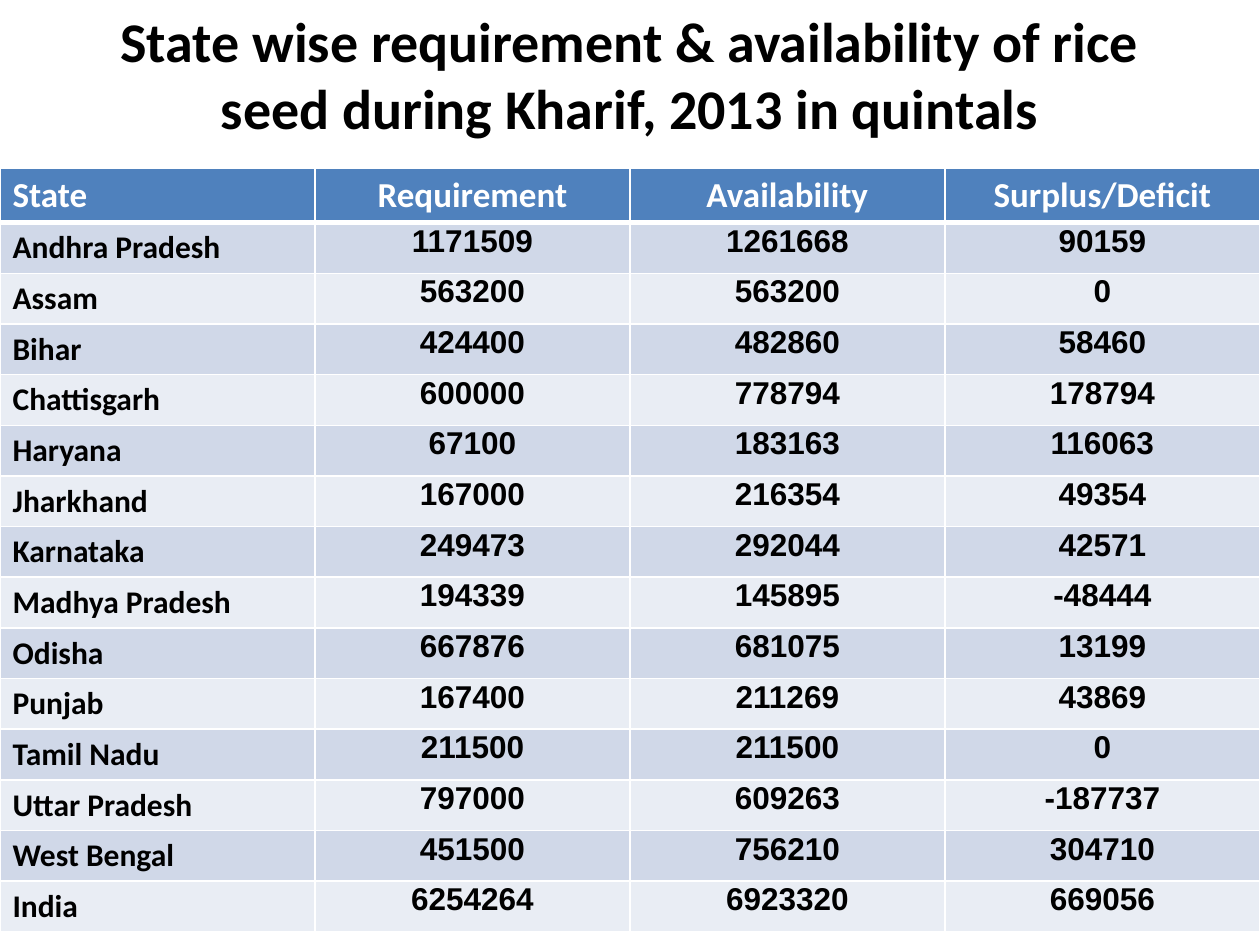
import pptx
import pptx.dml.color
import pptx.enum.text
import pptx.oxml
import pptx.oxml.ns
import pptx.util

PX = 914400 // 126
ALIGN = pptx.enum.text.PP_ALIGN
WHITE, BLACK, HEADER_BLUE = "FFFFFF", "000000", "4F81BD"
BANDS = ("D0D8E8", "E9EDF4")

TITLE = "State wise requirement & availability of rice seed during Kharif, 2013 in quintals"
HEADINGS = ("State", "Requirement", "Availability", "Surplus/Deficit")
STATES = (
    ("Andhra Pradesh", 1171509, 1261668, 90159),
    ("Assam", 563200, 563200, 0),
    ("Bihar", 424400, 482860, 58460),
    ("Chattisgarh", 600000, 778794, 178794),
    ("Haryana", 67100, 183163, 116063),
    ("Jharkhand", 167000, 216354, 49354),
    ("Karnataka", 249473, 292044, 42571),
    ("Madhya Pradesh", 194339, 145895, -48444),
    ("Odisha", 667876, 681075, 13199),
    ("Punjab", 167400, 211269, 43869),
    ("Tamil Nadu", 211500, 211500, 0),
    ("Uttar Pradesh", 797000, 609263, -187737),
    ("West Bengal", 451500, 756210, 304710),
    ("India", 6254264, 6923320, 669056),
)


def px(length):
    return pptx.util.Emu(length * PX)


def rgb(value):
    return pptx.dml.color.RGBColor.from_string(value)


class SeedSlide:
    heading_font = "Calibri"
    number_font = "Arial"

    def __init__(self, presentation):
        self.slide = presentation.slides.add_slide(presentation.slide_layouts[6])

    def add_text(self, frame, text, size, color, font, align):
        paragraph = frame.paragraphs[0]
        paragraph.alignment = align
        run = paragraph.add_run()
        run.text = text
        run.font.size = pptx.util.Pt(size)
        run.font.bold = True
        run.font.name = font
        run.font.color.rgb = rgb(color)

    def title(self, text, left, top, width, height):
        frame = self.slide.shapes.add_textbox(px(left), px(top), px(width), px(height)).text_frame
        frame.word_wrap = True
        frame.vertical_anchor = pptx.enum.text.MSO_ANCHOR.MIDDLE
        self.add_text(frame, text, 32, BLACK, self.heading_font, ALIGN.CENTER)

    def borders(self, cell, top=1, bottom=1):
        # Border lines must come before the fill in the cell properties
        properties = cell._tc.get_or_add_tcPr()
        for side, points in (("L", 1), ("R", 1), ("T", top), ("B", bottom)):
            properties.append(pptx.oxml.parse_xml(
                f'<a:ln{side} {pptx.oxml.ns.nsdecls("a")} w="{pptx.util.Pt(points)}">'
                f'<a:solidFill><a:srgbClr val="{WHITE}"/></a:solidFill></a:ln{side}>'))

    def fill(self, cell, color):
        cell.fill.solid()
        cell.fill.fore_color.rgb = rgb(color)

    def table(self, headings, records, left, top, width, height):
        table = self.slide.shapes.add_table(
            len(records) + 1, len(headings), px(left), px(top), px(width), px(height)).table
        table.horz_banding = False

        # Heading row, with a heavier rule below
        for column, heading in enumerate(headings):
            cell = table.cell(0, column)
            self.borders(cell, bottom=3)
            self.fill(cell, HEADER_BLUE)
            align = ALIGN.CENTER if column else ALIGN.LEFT
            self.add_text(cell.text_frame, heading, 20, WHITE, self.heading_font, align)

        # One banded row per state
        for row, record in enumerate(records, start=1):
            for column, value in enumerate(record):
                cell = table.cell(row, column)
                self.borders(cell, top=3 if row == 1 else 1)
                self.fill(cell, BANDS[(row - 1) % 2])
                font, align = self.heading_font, ALIGN.LEFT
                if column:
                    font, align = self.number_font, ALIGN.CENTER
                    cell.margin_left = cell.margin_right = cell.margin_top = px(1)
                    cell.margin_bottom = 0
                self.add_text(cell.text_frame, str(value), 18, BLACK, font, align)


def main():
    presentation = pptx.Presentation()
    presentation.slide_width, presentation.slide_height = px(1260), px(945)
    slide = SeedSlide(presentation)
    slide.title(TITLE, 63, 0, 1134, 147)
    slide.table(HEADINGS, STATES, 0, 168, 1260, 760)
    presentation.save("out.pptx")


if __name__ == "__main__":
    main()
